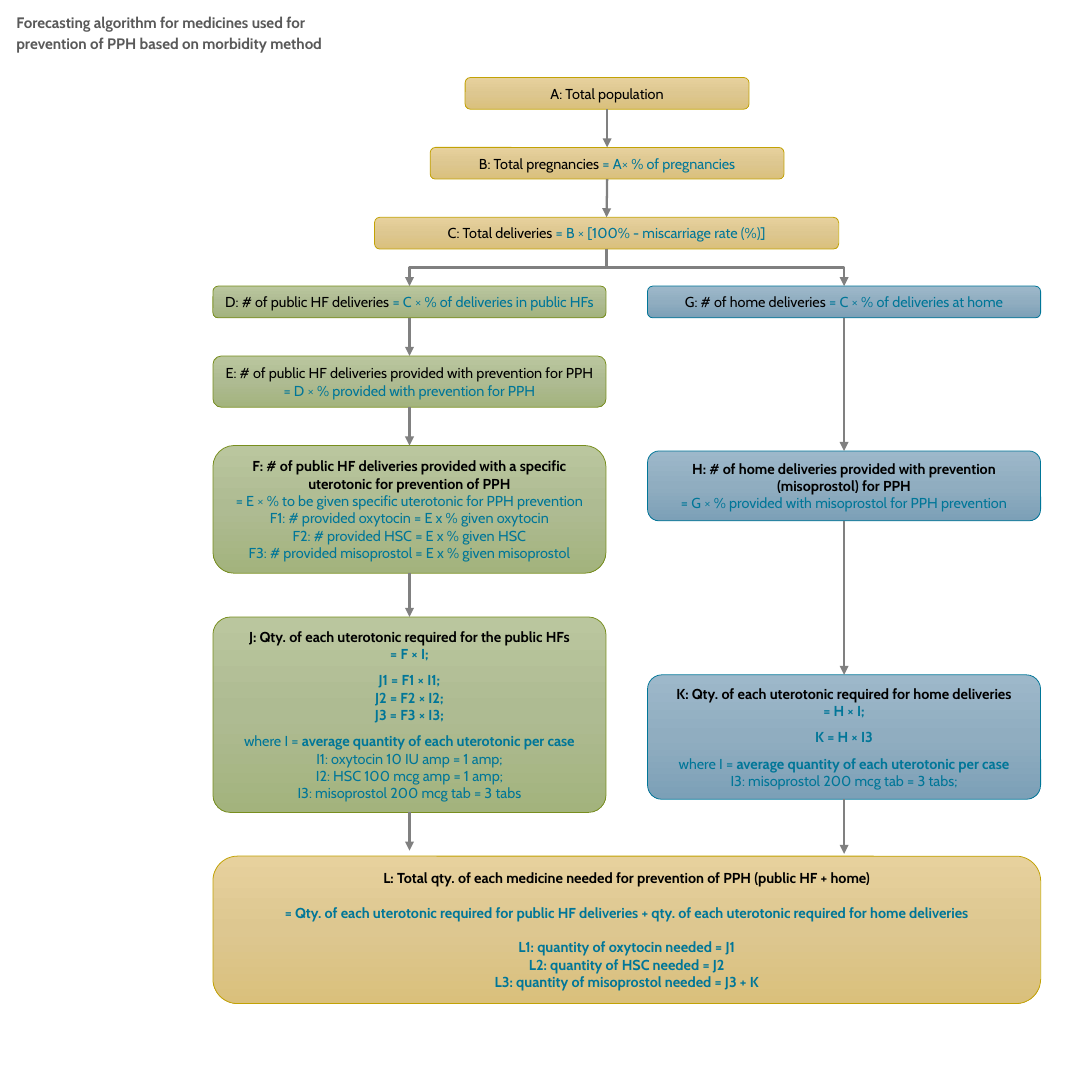
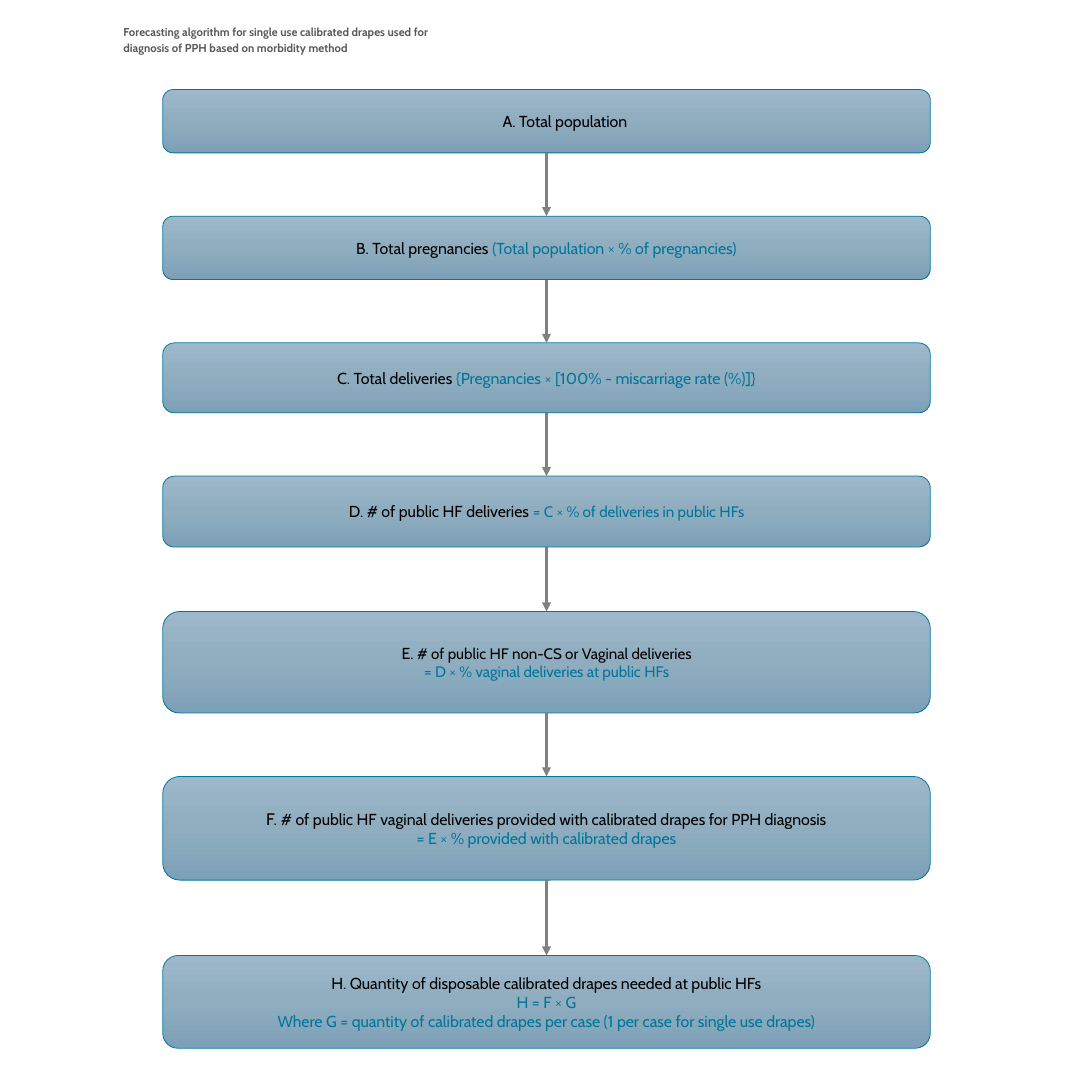
from copy import deepcopy

from lxml import etree
from pptx import Presentation
from pptx.dml.color import RGBColor
from pptx.enum import shapes, text
from pptx.oxml.ns import qn
from pptx.util import Inches, Pt

FONT = "Cabin"
BLACK, TEAL, GREY, TITLE_GREY = "000000", "007698", "808080", "595959"
# gradient stops from top to bottom, then the outline
GOLD = ("E7D19D", "DDC790", "DAC07C", "C2A204")
GREEN = ("BAC69E", "AEBB92", "A3B37D", "788E1E")
BLUE = ("9DB8CA", "90ADC0", "7CA0B7", TEAL)

LABEL, FORMULA = (BLACK, False), (TEAL, False)
BOLD_LABEL, BOLD_FORMULA = (BLACK, True), (TEAL, True)
AVERAGE = [("where I = ", FORMULA), ("average quantity of each uterotonic per case", BOLD_FORMULA)]

MEDICINES = {
    "title": ("Forecasting algorithm for medicines used for prevention of PPH "
              "based on morbidity method", (0.05, 0.05, 3.38, 0.47), 10),
    "size": 9.5,
    # step: (left, top, width, height), colours, corner, paragraphs as (space after, runs)
    "steps": {
        "A": ((4.26, 0.71, 2.6, 0.29), GOLD, None, [(0, [("A: Total population", LABEL)])]),
        "B": ((3.94, 1.35, 3.24, 0.29), GOLD, None, [
            (0, [("B: Total pregnancies ", LABEL), ("= A× % of pregnancies", FORMULA)])]),
        "C": ((3.43, 1.99, 4.25, 0.29), GOLD, None, [
            (0, [("C: Total deliveries ", LABEL),
                 ("= B × [100% - miscarriage rate (%)]", FORMULA)])]),
        "D": ((1.95, 2.62, 3.6, 0.29), GREEN, None, [
            (0, [("D: # of public HF deliveries ", LABEL),
                 ("= C × % of deliveries in public HFs", FORMULA)])]),
        "G": ((5.93, 2.62, 3.6, 0.29), BLUE, None, [
            (0, [("G: # of home deliveries ", LABEL),
                 ("= C × % of deliveries at home", FORMULA)])]),
        "E": ((1.95, 3.26, 3.6, 0.47), GREEN, None, [
            (0, [("E: # of public HF deliveries provided with prevention for PPH", LABEL)]),
            (0, [("= D × % provided with prevention for PPH", FORMULA)])]),
        "H": ((5.93, 4.13, 3.6, 0.64), BLUE, None, [
            (0, [("H: # of home deliveries provided with prevention (misoprostol) for PPH",
                  BOLD_LABEL)]),
            (0, [("= G × % provided with misoprostol for PPH prevention", FORMULA)])]),
        "F": ((1.95, 4.08, 3.6, 1.17), GREEN, None, [
            (0, [("F: # of public HF deliveries provided with a specific uterotonic "
                  "for prevention of PPH", BOLD_LABEL)]),
            (0, [("= E × % to be given specific uterotonic for PPH prevention", FORMULA)]),
            (0, [("F1: # provided oxytocin = E x % given oxytocin", FORMULA)]),
            (0, [("F2: # provided HSC = E x % given HSC", FORMULA)]),
            (0, [("F3: # provided misoprostol = E x % given misoprostol", FORMULA)])]),
        "J": ((1.95, 5.65, 3.6, 1.79), GREEN, 0.09, [
            (0, [("J: Qty. of each uterotonic required for the public HFs", BOLD_LABEL)]),
            (6, [("= F × I;", BOLD_FORMULA)]),
            (0, [("J1 = F1 × I1;", BOLD_FORMULA)]),
            (0, [("J2 = F2 × I2;", BOLD_FORMULA)]),
            (6, [("J3 = F3 × I3;", BOLD_FORMULA)]),
            (0, AVERAGE),
            (0, [("I1: oxytocin 10 IU amp = 1 amp;", FORMULA)]),
            (0, [("I2: HSC 100 mcg amp = 1 amp;", FORMULA)]),
            (0, [("I3: misoprostol 200 mcg tab = 3 tabs", FORMULA)])]),
        "K": ((5.93, 6.18, 3.6, 1.14), BLUE, 0.115, [
            (0, [("K: Qty. of each uterotonic required for home deliveries", BOLD_LABEL)]),
            (6, [("= H × I;", BOLD_FORMULA)]),
            (6, [("K = H × I3", BOLD_FORMULA)]),
            (0, AVERAGE),
            (0, [("I3: misoprostol 200 mcg tab = 3 tabs;", FORMULA)])]),
        "L": ((1.95, 7.84, 7.58, 1.35), GOLD, None, [
            (11.4, [("L: Total qty. of each medicine needed for prevention of PPH "
                     "(public HF + home)", BOLD_LABEL)]),
            (11.4, [("= Qty. of each uterotonic required for public HF deliveries + qty. of each "
                     "uterotonic required for home deliveries", BOLD_FORMULA)]),
            (0, [("L1: quantity of oxytocin needed = J1", BOLD_FORMULA)]),
            (0, [("L2: quantity of HSC needed = J2", BOLD_FORMULA)]),
            (0, [("L3: quantity of misoprostol needed = J3 + K", BOLD_FORMULA)])]),
    },
    "flows": ["AB", "BC", "DE", "EF", "FJ", "GH", "HK"],
    "forks": ["CD", "CG"],
    "merges": [("J", 7.79), ("K", 7.82)],
}

DRAPES = {
    "title": ("Forecasting algorithm for single use calibrated drapes used for diagnosis of PPH "
              "based on morbidity method", (1.03, 0.16, 3.16, 0.38), 7.5),
    "size": 10.5,
    "steps": {
        step: ((1.49, top, 7.03, height), BLUE, None, [(0, runs) for runs in paragraphs])
        for step, top, height, paragraphs in [
            ("A", 0.82, 0.58, [[("A. Total population", LABEL)]]),
            ("B", 1.98, 0.58, [[("B. Total pregnancies ", LABEL),
                                ("(Total population × % of pregnancies)", FORMULA)]]),
            ("C", 3.14, 0.64, [[("C. Total deliveries ", LABEL),
                                ("{Pregnancies × [100% - miscarriage rate (%)]}", FORMULA)]]),
            ("D", 4.36, 0.65, [[("D. # of public HF deliveries ", LABEL),
                                ("= C × % of deliveries in public HFs", FORMULA, 10)]]),
            ("E", 5.6, 0.93, [[("E. ", LABEL),
                               ("# of public HF non-CS or Vaginal deliveries", LABEL, 10)],
                              [("= D × % vaginal deliveries at public HFs", FORMULA, 10)]]),
            ("F", 7.11, 0.95, [[("F. ", LABEL, 11),
                                ("# of public HF vaginal deliveries provided with calibrated "
                                 "drapes for PPH diagnosis", LABEL)],
                               [("= E × % provided with calibrated drapes", FORMULA)]]),
            ("H", 8.75, 0.85, [[("H. Quantity of disposable calibrated drapes needed "
                                 "at public HFs", LABEL)],
                               [("H = F × G", FORMULA)],
                               [("Where G = quantity of calibrated drapes per case "
                                 "(1 per case for single use drapes)", FORMULA)]]),
        ]
    },
    "flows": ["AB", "BC", "CD", "DE", "EF", "FH"],
    "forks": [],
    "merges": [],
}


def style_font(font, size, colour, bold):
    font.name, font.size, font.bold = FONT, Pt(size), bold
    font.color.rgb = RGBColor.from_string(colour)


def add_arrow(slide, kind, *ends):
    """Draw a grey arrow; ends are begin x, begin y, end x, end y."""
    arrow = slide.shapes.add_connector(kind, *ends)
    arrow.line.width = Pt(1.5)
    arrow.line.color.rgb = RGBColor.from_string(GREY)
    etree.SubElement(arrow.line._get_or_add_ln(), qn("a:tailEnd"), type="triangle")
    etree.SubElement(arrow._element.spPr, qn("a:effectLst"))
    return arrow


prs = Presentation()
prs.slide_width = prs.slide_height = Inches(10)

for chart in (MEDICINES, DRAPES):
    slide = prs.slides.add_slide(prs.slide_layouts[5])

    wording, place, title_size = chart["title"]
    title = slide.shapes.title
    title.left, title.top, title.width, title.height = map(Inches, place)
    frame = title.text_frame
    frame.text = wording
    frame.word_wrap = True
    frame.auto_size = text.MSO_AUTO_SIZE.NONE
    frame.vertical_anchor = text.MSO_ANCHOR.TOP
    heading = frame.paragraphs[0]
    heading.alignment = text.PP_ALIGN.LEFT
    heading.line_spacing = 1.15
    heading.space_before, heading.space_after = Pt(title_size * 0.6), Pt(title_size * 1.8)
    style_font(heading.font, title_size, TITLE_GREY, True)

    boxes = {}
    for step, (place, (*gradient, outline), corner, paragraphs) in chart["steps"].items():
        box = slide.shapes.add_shape(shapes.MSO_SHAPE.ROUNDED_RECTANGLE, *map(Inches, place))
        boxes[step] = box
        box.shadow.inherit = False
        if corner:
            box.adjustments[0] = corner
        box.line.width = Pt(0.5)
        box.line.color.rgb = RGBColor.from_string(outline)
        box.fill.gradient()
        box.fill.gradient_angle = 270
        stop_list = box._element.spPr.find(".//" + qn("a:gsLst"))
        stop_list.insert(1, deepcopy(stop_list[0]))
        for stop, position, colour in zip(box.fill.gradient_stops, (0, 0.5, 1), gradient):
            stop.position = position
            stop.color.rgb = RGBColor.from_string(colour)

        frame = box.text_frame
        frame.word_wrap = True
        frame.vertical_anchor = text.MSO_ANCHOR.MIDDLE
        frame.margin_left = frame.margin_right = Inches(0.05)
        frame.margin_top = frame.margin_bottom = Inches(0.05)
        for number, (space_after, runs) in enumerate(paragraphs):
            paragraph = frame.add_paragraph() if number else frame.paragraphs[0]
            paragraph.alignment = text.PP_ALIGN.CENTER
            paragraph.space_after = Pt(space_after)
            for wording, (colour, bold), *own_size in runs:
                run = paragraph.add_run()
                run.text = wording
                size = own_size[0] if own_size else chart["size"]
                font = paragraph.font if len(runs) == 1 else run.font
                style_font(font, size, colour, bold)

    for begin, end in chart["flows"]:
        arrow = add_arrow(slide, shapes.MSO_CONNECTOR.STRAIGHT, 0, 0, 0, 0)
        arrow.begin_connect(boxes[begin], 2)
        arrow.end_connect(boxes[end], 0)

    # An elbow that leaves downwards is a sideways one, turned about its centre.
    for begin, end in chart["forks"]:
        upper, lower = boxes[begin], boxes[end]
        x1, y1 = upper.left + upper.width // 2, upper.top + upper.height
        x2, y2 = lower.left + lower.width // 2, lower.top
        mid_x, mid_y = (x1 + x2) // 2, (y1 + y2) // 2
        goes_left = x2 < x1
        half_drop = (y2 - y1) // 2 * (1 if goes_left else -1)
        half_reach = abs(x2 - x1) // 2
        arrow = add_arrow(slide, shapes.MSO_CONNECTOR.ELBOW,
                          mid_x - half_drop, mid_y - half_reach,
                          mid_x + half_drop, mid_y + half_reach)
        arrow._element.spPr.xfrm.set("rot", str((90 if goes_left else 270) * 60000))

    for begin, tip in chart["merges"]:
        box = boxes[begin]
        x = box.left + box.width // 2
        add_arrow(slide, shapes.MSO_CONNECTOR.STRAIGHT, x, box.top + box.height, x, Inches(tip))

    if chart is DRAPES:
        boxes["A"].text_frame.margin_left = Inches(0.39)

prs.save("out.pptx")
